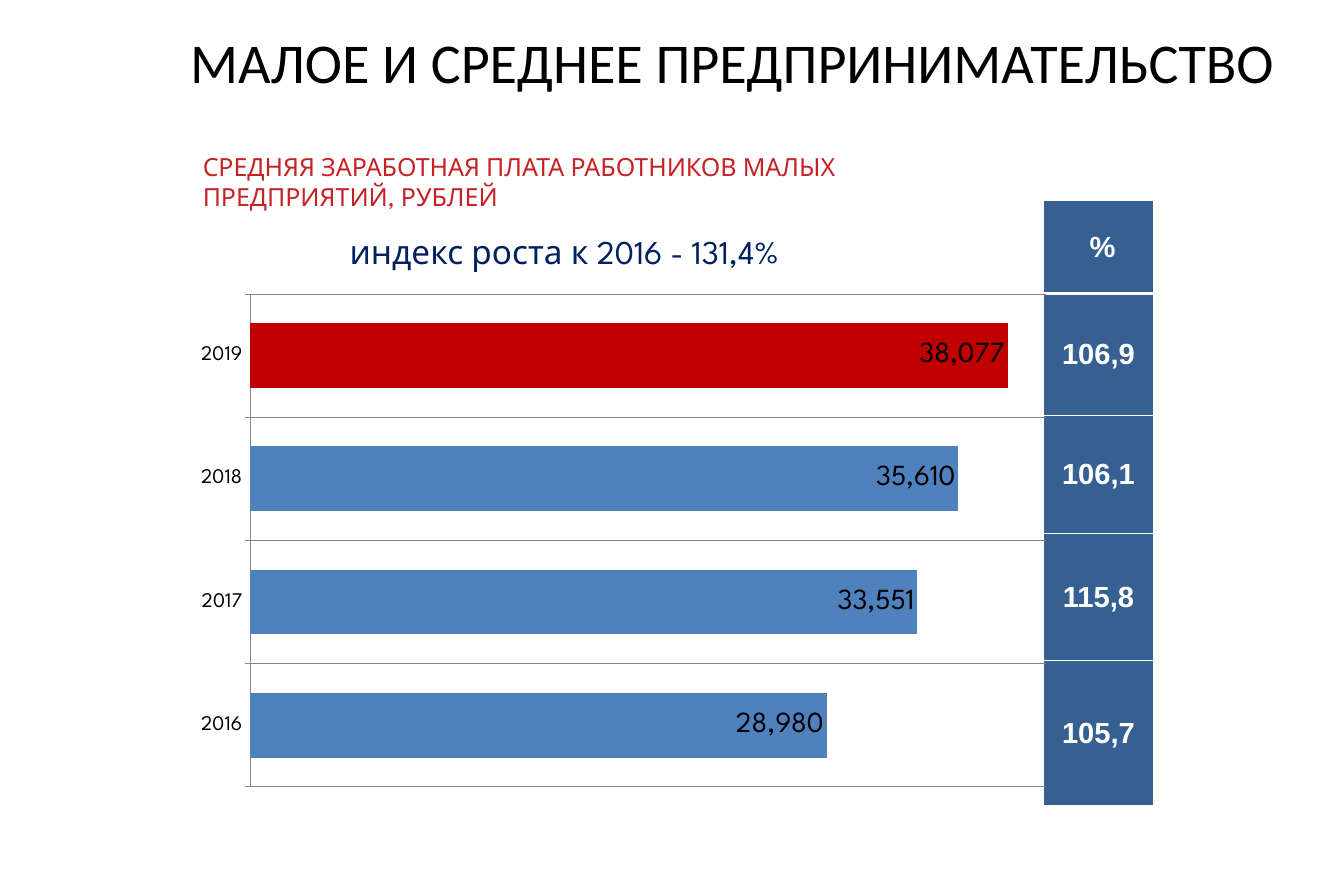
from lxml.etree import SubElement
from pptx import Presentation
from pptx.chart.data import CategoryChartData
from pptx.dml.color import RGBColor
from pptx.enum.chart import XL_CHART_TYPE as ChartType
from pptx.enum.chart import XL_LABEL_POSITION as LabelPosition
from pptx.enum.chart import XL_TICK_MARK as TickMark
from pptx.enum.text import MSO_ANCHOR as Anchor
from pptx.enum.text import MSO_AUTO_SIZE as AutoSize
from pptx.enum.text import PP_ALIGN as Align
from pptx.oxml import parse_xml
from pptx.oxml.ns import nsdecls, qn
from pptx.util import Pt

EMU_PER_PX = 9144  # 100 px to the inch
BLACK = RGBColor(0x00, 0x00, 0x00)
WHITE = RGBColor(0xFF, 0xFF, 0xFF)
CRIMSON = RGBColor(0xC6, 0x22, 0x26)
NAVY = RGBColor(0x00, 0x20, 0x60)
STEEL = RGBColor(0x37, 0x60, 0x92)
BLUE = RGBColor(0x4F, 0x81, 0xBD)
RED = RGBColor(0xC0, 0x00, 0x00)
GRAY = RGBColor(0x86, 0x86, 0x86)
DISPLAY_FONT = "League Spartan"
THOUSANDS = "#,##0"

WAGES = {"2016": 28980, "2017": 33551, "2018": 35610, "2019": 38077}
GROWTH_ROWS = [(" %", 124), ("106,9", 163), ("106,1", 158),
               ("115,8", 170), ("105,7", 193)]


def px(*lengths):
    return [length * EMU_PER_PX for length in lengths]


def style_font(font, name, size, color, bold=False):
    font.name, font.size, font.bold = name, Pt(size), bold
    font.color.rgb = color


def add_title(slide, text, box):
    title = slide.shapes.title
    title.left, title.top, title.width, title.height = px(*box)
    frame = title.text_frame
    frame.text = text
    frame.auto_size = AutoSize.NONE
    frame.vertical_anchor = Anchor.TOP
    paragraph = frame.paragraphs[0]
    paragraph.alignment = Align.LEFT
    style_font(paragraph.runs[0].font, "Calibri", 54, BLACK)


def add_caption(slide, text, box, size, color):
    frame = slide.shapes.add_textbox(*px(*box)).text_frame
    frame.word_wrap = True
    frame.text = text
    style_font(frame.paragraphs[0].runs[0].font, DISPLAY_FONT, size, color)


def set_borders(cell, top, bottom):
    """Draw white cell borders; top and bottom widths are in points."""
    properties = cell._tc.get_or_add_tcPr()
    widths = {"lnL": 1, "lnR": 1, "lnT": top, "lnB": bottom}
    for position, (side, width) in enumerate(widths.items()):
        properties.insert(position, parse_xml(
            f'<a:{side} {nsdecls("a")} w="{Pt(width)}"><a:solidFill>'
            f'<a:srgbClr val="{WHITE}"/></a:solidFill></a:{side}>'))


def add_growth_table(slide, left, top, width):
    height = sum(row_height for _, row_height in GROWTH_ROWS)
    table = slide.shapes.add_table(
        len(GROWTH_ROWS), 1, *px(left, top, width, height)).table
    for index, (text, row_height) in enumerate(GROWTH_ROWS):
        table.rows[index].height = px(row_height)[0]
        cell = table.cell(index, 0)
        cell.text = text
        cell.vertical_anchor = Anchor.MIDDLE
        cell.fill.solid()
        cell.fill.fore_color.rgb = STEEL
        set_borders(cell, top=3 if index == 1 else 1,
                    bottom=3 if index == 0 else 1)
        paragraph = cell.text_frame.paragraphs[0]
        paragraph.alignment = Align.CENTER
        style_font(paragraph.runs[0].font, "Arial", 28, WHITE, bold=True)


def set_plot_layout(chart, x, y, w, h):
    """Place the inner plot area by fractions of the chart."""
    plot_area = chart._chartSpace.chart.plotArea
    for old_layout in plot_area.findall(qn("c:layout")):
        plot_area.remove(old_layout)
    layout = parse_xml(f'<c:layout {nsdecls("c")}/>')
    manual = SubElement(layout, qn("c:manualLayout"))
    settings = {"layoutTarget": "inner", "xMode": "edge", "yMode": "edge",
                "x": x, "y": y, "w": w, "h": h}
    for tag, value in settings.items():
        SubElement(manual, qn(f"c:{tag}")).set("val", str(value))
    plot_area.insert(0, layout)


def add_wage_chart(slide, box):
    data = CategoryChartData(number_format=THOUSANDS)
    data.categories = list(WAGES)
    data.add_series("Series 1", list(WAGES.values()))
    chart = slide.shapes.add_chart(
        ChartType.BAR_CLUSTERED, *px(*box), data).chart
    chart.has_title = False
    chart.has_legend = False
    style_font(chart.font, "Calibri", 10, BLACK)
    set_plot_layout(chart, 0.1, 0.01, 0.88, 0.95)

    years = chart.category_axis
    years.has_major_gridlines = True
    years.major_tick_mark = TickMark.OUTSIDE
    style_font(years.tick_labels.font, DISPLAY_FONT, 20, BLACK)
    for line in (years.format.line, years.major_gridlines.format.line):
        line.color.rgb = GRAY
        line.width = Pt(0.75)

    rubles = chart.value_axis
    rubles.minimum_scale, rubles.maximum_scale = 0, 40000
    rubles.has_major_gridlines = False
    rubles.visible = False

    plot = chart.plots[0]
    plot.gap_width = 90
    plot.vary_by_categories = False
    wages = plot.series[0]
    latest = wages.points[len(WAGES) - 1]
    for bar, color in ((wages, BLUE), (latest, RED)):
        bar.format.fill.solid()
        bar.format.fill.fore_color.rgb = color

    labels = wages.data_labels
    labels.show_value = True
    labels.position = LabelPosition.INSIDE_END
    labels.number_format = THOUSANDS
    labels.number_format_is_linked = False
    style_font(labels.font, DISPLAY_FONT, 28, BLACK)


def main():
    deck = Presentation()
    deck.slide_width, deck.slide_height = px(1795, 1181)
    slide = deck.slides.add_slide(deck.slide_layouts.get_by_name("Title Only"))
    add_title(slide, "МАЛОЕ И СРЕДНЕЕ ПРЕДПРИНИМАТЕЛЬСТВО",
              (244, 32, 1526, 126))
    add_caption(
        slide, "СРЕДНЯЯ ЗАРАБОТНАЯ ПЛАТА РАБОТНИКОВ МАЛЫХ ПРЕДПРИЯТИЙ, РУБЛЕЙ",
        (261, 197, 983, 91), 24, CRIMSON)
    add_caption(slide, "индекс роста к 2016 - 131,4%",
                (457, 304, 787, 64), 32, NAVY)
    add_growth_table(slide, 1394, 268, 146)
    add_wage_chart(slide, (213, 386, 1208, 693))
    deck.save("out.pptx")


if __name__ == "__main__":
    main()
